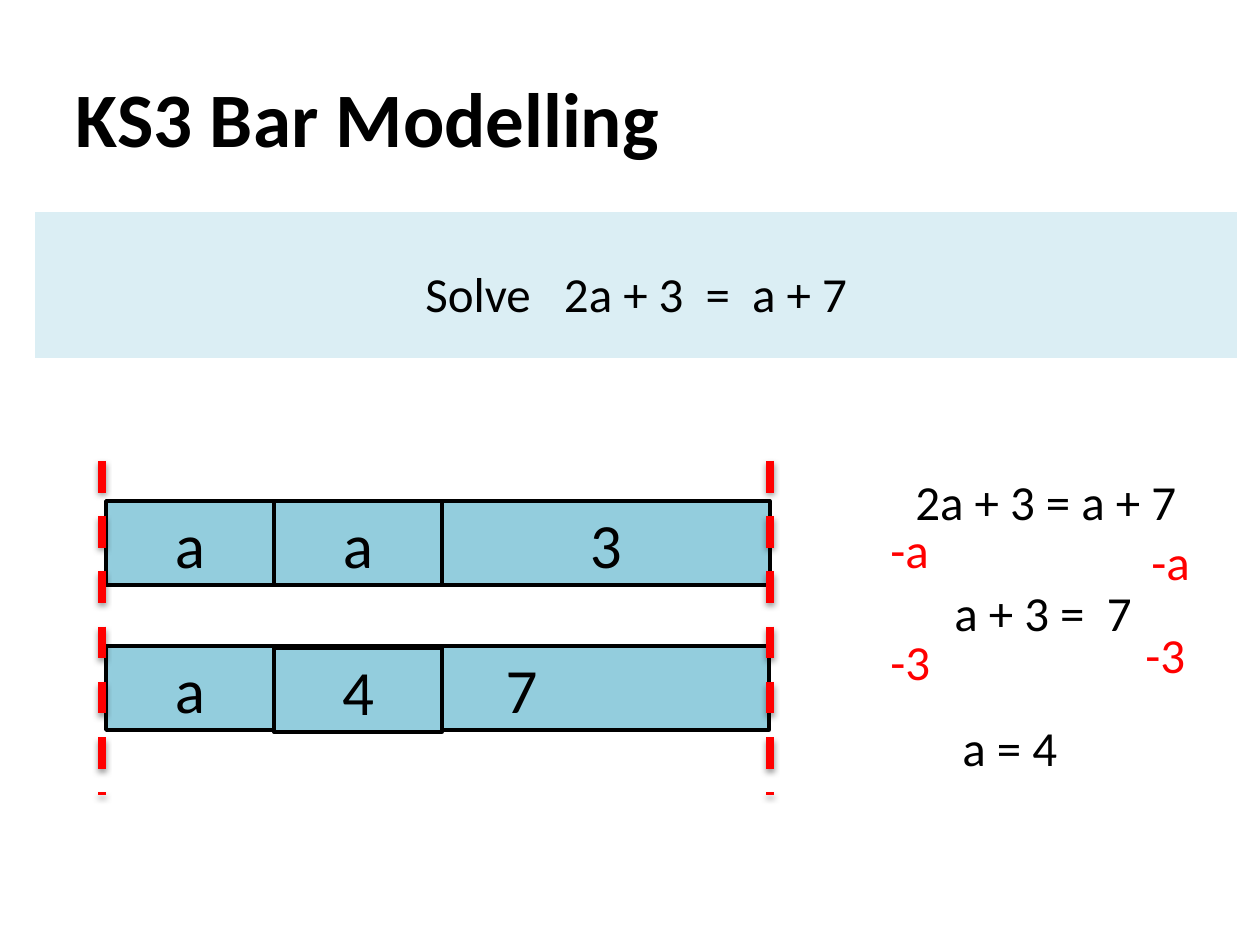
from lxml import etree
from pptx import Presentation
from pptx.dml.color import RGBColor
from pptx.enum.dml import MSO_LINE
from pptx.enum.shapes import MSO_CONNECTOR, MSO_SHAPE
from pptx.enum.text import MSO_ANCHOR, MSO_AUTO_SIZE, PP_ALIGN
from pptx.oxml import parse_xml
from pptx.oxml.ns import nsdecls, qn
from pptx.util import Emu, Pt

BLACK = RGBColor(0x00, 0x00, 0x00)
RED = RGBColor(0xFF, 0x00, 0x00)
BAR_BLUE = RGBColor(0x93, 0xCD, 0xDD)
BANNER_BLUE = RGBColor(0xDB, 0xEE, 0xF4)

LEFT, CENTER = PP_ALIGN.LEFT, PP_ALIGN.CENTER
MIDDLE = MSO_ANCHOR.MIDDLE
RECTANGLE = MSO_SHAPE.RECTANGLE
STRAIGHT = MSO_CONNECTOR.STRAIGHT
DASH = MSO_LINE.DASH
FIT_SHAPE = MSO_AUTO_SIZE.SHAPE_TO_FIT_TEXT

PX_PER_INCH = 126
TITLE_ONLY = 5


def px(length):
    return Emu(round(length * 914400 / PX_PER_INCH))


class SlideBuilder:
    font_name = "Calibri"

    def __init__(self, slide):
        self.slide = slide
        self.shapes = slide.shapes

    def set_text(self, shape, text, size, color=BLACK, align=LEFT, bold=False):
        shape.text_frame.text = text
        paragraph = shape.text_frame.paragraphs[0]
        paragraph.alignment = align
        font = paragraph.font
        font.name, font.size, font.bold = self.font_name, Pt(size), bold
        font.color.rgb = color

    def title(self, text, left, top, width, height):
        title = self.shapes.title
        title.left, title.top = px(left), px(top)
        title.width, title.height = px(width), px(height)
        title.text_frame.vertical_anchor = MIDDLE
        self.set_text(title, text, 44, bold=True)

    def box(self, text, left, top, width, height, size=36, fill=BAR_BLUE, outlined=True):
        box = self.shapes.add_shape(RECTANGLE, px(left), px(top), px(width), px(height))
        box.shadow.inherit = False
        box.fill.solid()
        box.fill.fore_color.rgb = fill
        if outlined:
            box.line.color.rgb = BLACK
            box.line.width = Pt(2)
        else:
            box.line.fill.background()
        box.text_frame.vertical_anchor = MIDDLE
        self.set_text(box, text, size, align=CENTER)
        return box

    def label(self, text, left, top, width, color=BLACK):
        label = self.shapes.add_textbox(px(left), px(top), px(width), px(72))
        label.text_frame.word_wrap = True
        label.text_frame.auto_size = FIT_SHAPE
        self.set_text(label, text, 28, color)

    def guide(self, x, top, bottom):
        """Add a dashed red vertical line with a soft shadow below it."""
        guide = self.shapes.add_connector(STRAIGHT, px(x), px(top), px(x), px(bottom))
        guide.line.color.rgb = RED
        guide.line.width = Pt(4.5)
        guide.line.dash_style = DASH
        effects = etree.SubElement(guide._element.spPr, qn("a:effectLst"))
        effects.append(parse_xml(
            f'<a:outerShdw {nsdecls("a")} blurRad="40000" dist="20000" dir="5400000" rotWithShape="0">'
            '<a:srgbClr val="000000"><a:alpha val="38000"/></a:srgbClr></a:outerShdw>'))


def main():
    presentation = Presentation()
    presentation.slide_width, presentation.slide_height = px(1260), px(945)
    slide = presentation.slides.add_slide(presentation.slide_layouts[TITLE_ONLY])
    builder = SlideBuilder(slide)

    builder.title("KS3 Bar Modelling", 63, 38, 804, 157)
    banner = builder.box("Solve   2a + 3  =  a + 7", 35, 212, 1202, 146,
                         size=28, fill=BANNER_BLUE, outlined=False)
    banner.text_frame.margin_top = px(22)

    bar_left, unit, bar_height = 106, 168, 84
    upper_top, lower_top = 501, 646
    second, third = bar_left + unit, bar_left + 2 * unit
    for text, left, top, width in (
        ("a", bar_left, upper_top, unit),
        ("a", second, upper_top, unit),
        ("3", third, upper_top, 328),
        ("a", bar_left, lower_top, unit),
        ("7", second, lower_top, 495),
    ):
        builder.box(text, left, top, width, bar_height)

    for x in (770, 102):
        builder.guide(x, 461, 795)

    for text, left, top in (
        ("2a + 3 = a + 7", 903, 465),
        ("a + 3 =  7", 942, 576),
        ("a = 4", 950, 711),
    ):
        builder.label(text, left, top, 334)

    for text, left, top in (
        ("-a", 878, 513),
        ("-a", 1139, 525),
        ("-3", 878, 625),
        ("-3", 1133, 618),
    ):
        builder.label(text, left, top, 72, RED)

    builder.box("4", second, lower_top + 2, unit, bar_height)

    presentation.save("out.pptx")


if __name__ == "__main__":
    main()
